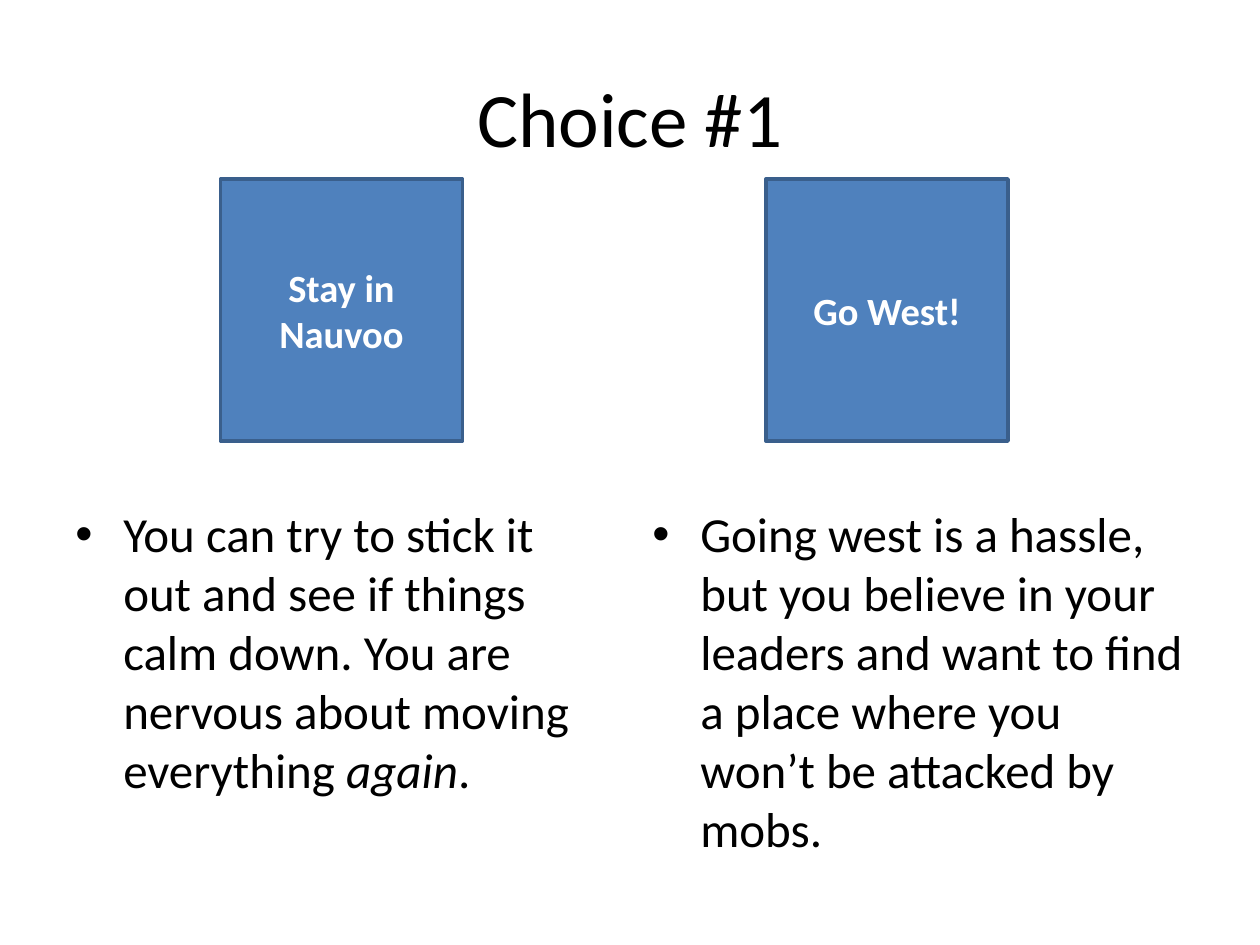
import pptx
import pptx.util
import pptx.dml.color
import pptx.enum.shapes
import pptx.enum.text
import pptx.oxml.ns
import lxml.etree

WIDE, HIGH = 10, 7.5
EDGE = 0.05 * WIDE
ALIGN = pptx.enum.text.PP_ALIGN
MIDDLE = pptx.enum.text.MSO_ANCHOR.MIDDLE

CHOICES = [
    ("Stay in Nauvoo",
     ["You can try to stick it out and see if things calm down. "
      "You are nervous about moving everything ", "again", "."]),
    ("Go West!",
     ["Going west is a hassle, but you believe in your leaders and want "
      "to find a place where you won’t be attacked by mobs."]),
]


def inch(size):
    return pptx.util.Inches(size)


def paint(hue):
    return pptx.dml.color.RGBColor.from_string(hue)


def style(run, size, hue, bold=False, slant=False):
    font = run.font
    font.name = "Calibri"
    font.size = pptx.util.Pt(size)
    font.color.rgb = paint(hue)
    font.bold = bold
    font.italic = slant


def center(frame, size, hue, bold=False):
    frame.word_wrap = True
    frame.vertical_anchor = MIDDLE
    para = frame.paragraphs[0]
    para.alignment = ALIGN.CENTER
    style(para.runs[0], size, hue, bold)


def add_title(slide, text):
    title = slide.shapes.title
    title.left, title.top = inch(EDGE), inch(0.04 * HIGH)
    title.width, title.height = inch(WIDE - 2 * EDGE), inch(HIGH / 6)
    title.text_frame.text = text
    center(title.text_frame, 44, "000000")


def add_button(slide, col, text):
    kind = pptx.enum.shapes.MSO_SHAPE.ACTION_BUTTON_CUSTOM
    left = 1.75 + col * 4.33
    button = slide.shapes.add_shape(
        kind, inch(left), inch(1.42), inch(1.92), inch(2.08))
    button.shadow.inherit = False
    button.fill.solid()
    button.fill.fore_color.rgb = paint("4F81BD")
    button.line.color.rgb = paint("3A5F8C")
    button.line.width = pptx.util.Pt(2)
    button.text_frame.text = text
    center(button.text_frame, 22, "FFFFFF", True)


def add_bullet(para):
    props = para._p.get_or_add_pPr()
    props.set("marL", str(inch(0.38)))
    props.set("indent", str(inch(-0.38)))
    name = pptx.oxml.ns.qn
    lxml.etree.SubElement(props, name("a:buFont")).set("typeface", "Arial")
    lxml.etree.SubElement(props, name("a:buChar")).set("char", "•")


def add_body(slide, col, parts):
    left = EDGE + col * 4.58
    box = slide.shapes.add_textbox(
        inch(left), inch(3.95), inch(4.42), inch(2.75))
    frame = box.text_frame
    frame.word_wrap = True
    para = frame.paragraphs[0]
    para.alignment = ALIGN.LEFT
    add_bullet(para)
    for part in parts:
        run = para.add_run()
        run.text = part
        style(run, 28, "000000", slant=part == "again")


def main():
    deck = pptx.Presentation()
    deck.slide_width, deck.slide_height = inch(WIDE), inch(HIGH)
    slide = deck.slides.add_slide(deck.slide_layouts[5])
    add_title(slide, "Choice #1")
    for col, (label, parts) in enumerate(CHOICES):
        add_body(slide, col, parts)
        add_button(slide, col, label)
    deck.save("out.pptx")


if __name__ == "__main__":
    main()
